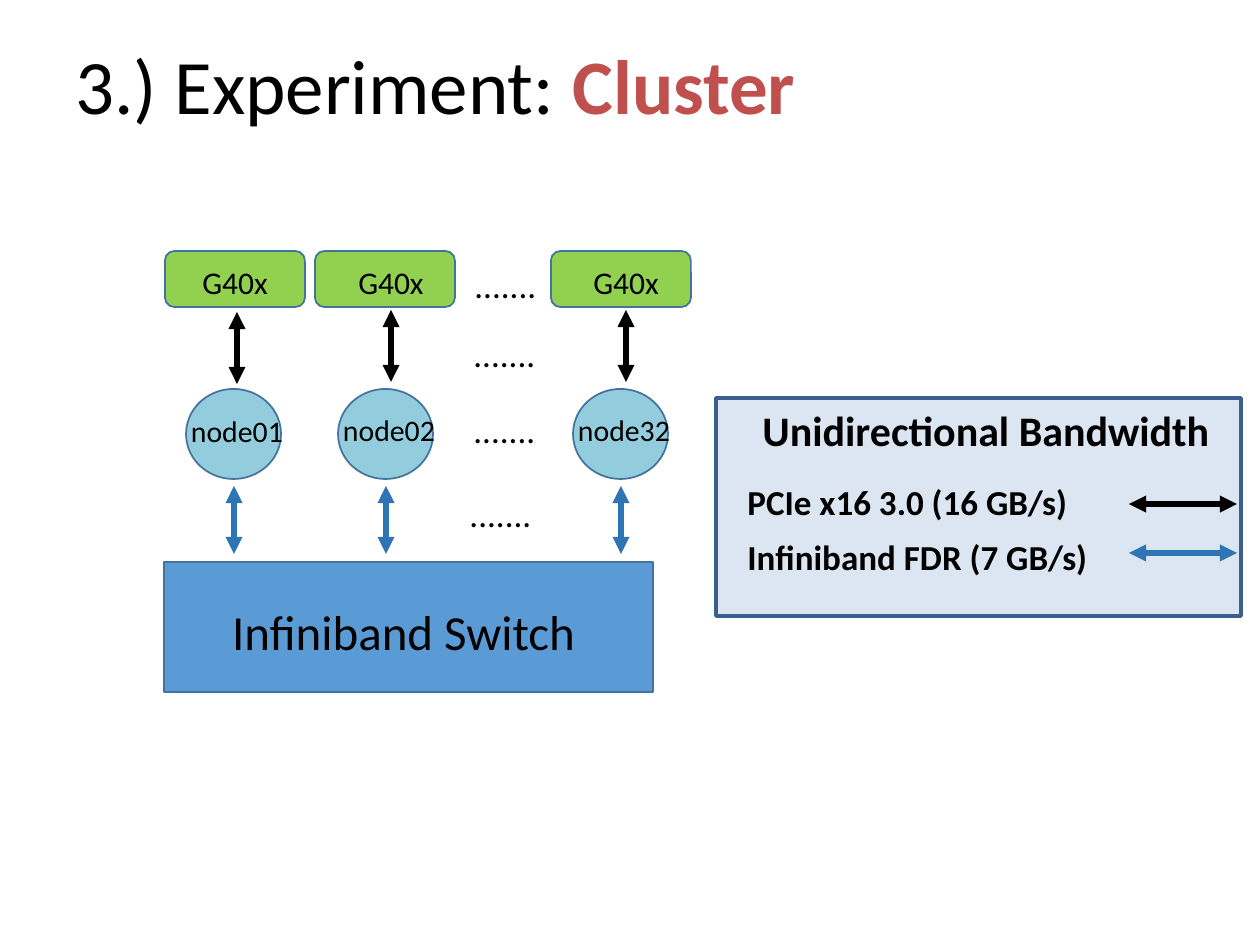
"""Build the cluster slide: GPUs, nodes, switch and bandwidth legend."""
from dataclasses import dataclass

from lxml.etree import SubElement
from pptx import Presentation
from pptx.dml.color import RGBColor
from pptx.enum.shapes import MSO_CONNECTOR, MSO_SHAPE
from pptx.enum.text import MSO_ANCHOR, PP_ALIGN
from pptx.oxml.ns import qn
from pptx.util import Emu, Pt

FONT = "Calibri"
BLACK = RGBColor(0x00, 0x00, 0x00)
RED = RGBColor(0xC0, 0x50, 0x4D)
GREEN = RGBColor(0x92, 0xD0, 0x50)
AQUA = RGBColor(0x93, 0xCD, 0xDD)
BLUE = RGBColor(0x5B, 0x9B, 0xD5)
LINK_BLUE = RGBColor(0x2E, 0x75, 0xB6)
OUTLINE = RGBColor(0x43, 0x73, 0x9E)
PANEL = RGBColor(0xDC, 0xE6, 0xF2)
PANEL_LINE = RGBColor(0x3A, 0x5F, 0x8C)


@dataclass
class Box:
    x: int
    y: int
    w: int
    h: int


@dataclass
class Column:
    node: str
    gpu_x: int
    gpu_label_x: int
    bus_x: int
    bus_y: int
    node_x: int
    node_label_y: int


@dataclass
class LegendRow:
    text: str
    text_y: int
    arrow_y: int
    color: RGBColor


COLUMNS = [
    Column("node01", 165, 174, 237, 312, 186, 407),
    Column("node02", 315, 330, 391, 310, 338, 406),
    Column("node32", 551, 565, 626, 310, 573, 406),
]
DOTS = [(462, 257), (461, 326), (461, 402), (457, 486)]
LEGEND = [
    LegendRow("PCIe x16 3.0 (16 GB/s)", 474, 504, BLACK),
    LegendRow("Infiniband FDR (7 GB/s)", 529, 553, LINK_BLUE),
]


def px(n: int) -> Emu:
    """Turn pixels into EMU."""
    return Emu(round(n * 914400 / 126))


def style_run(r, size: int, color: RGBColor = BLACK, bold: bool = False) -> None:
    """Set the font of one run."""
    r.font.name = FONT
    r.font.size = Pt(size)
    r.font.bold = bold
    r.font.color.rgb = color


def add_shape(s, kind: MSO_SHAPE, box: Box, fill: RGBColor,
              line: RGBColor = OUTLINE, width: int = 1) -> None:
    """Draw a filled and outlined shape."""
    sp = s.shapes.add_shape(kind, px(box.x), px(box.y), px(box.w), px(box.h))
    sp.shadow.inherit = False
    sp.fill.solid()
    sp.fill.fore_color.rgb = fill
    sp.line.color.rgb = line
    sp.line.width = Pt(width)


def add_text(s, text: str, box: Box, size: int, bold: bool = False,
             align: PP_ALIGN = PP_ALIGN.LEFT):
    """Write one paragraph and return its text frame."""
    sp = s.shapes.add_textbox(px(box.x), px(box.y), px(box.w), px(box.h))
    tf = sp.text_frame
    tf.word_wrap = True
    tf.text = text
    p = tf.paragraphs[0]
    p.alignment = align
    style_run(p.runs[0], size, bold=bold)
    return tf


def add_arrow(s, x1: int, y1: int, x2: int, y2: int, color: RGBColor) -> None:
    """Draw a double-headed arrow."""
    cxn = s.shapes.add_connector(MSO_CONNECTOR.STRAIGHT, px(x1), px(y1), px(x2), px(y2))
    cxn.line.color.rgb = color
    cxn.line.width = Pt(3.25)
    ln = cxn.line._get_or_add_ln()
    for end in ("a:headEnd", "a:tailEnd"):
        SubElement(ln, qn(end), type="triangle")
    SubElement(cxn._element.spPr, qn("a:effectLst"))


def add_column(s, col: Column) -> None:
    """Draw a GPU, its node and the two links below them."""
    add_shape(s, MSO_SHAPE.ROUNDED_RECTANGLE, Box(col.gpu_x, 251, 140, 56), GREEN)
    add_text(s, "G40x", Box(col.gpu_label_x, 257, 122, 47), 18, align=PP_ALIGN.CENTER)
    add_arrow(s, col.bus_x, col.bus_y, col.bus_x, col.bus_y + 72, BLACK)
    add_shape(s, MSO_SHAPE.OVAL, Box(col.node_x, 389, 95, 90), AQUA)
    add_text(s, col.node, Box(col.node_x - 26, col.node_label_y, 154, 44), 17,
             align=PP_ALIGN.CENTER)
    link_x = col.node_x + 48
    add_arrow(s, link_x, 554, link_x, 486, LINK_BLUE)


def add_legend(s) -> None:
    """Draw the bandwidth legend."""
    add_shape(s, MSO_SHAPE.RECTANGLE, Box(716, 398, 525, 218), PANEL, PANEL_LINE, 2)
    add_text(s, "Unidirectional Bandwidth", Box(750, 398, 483, 63), 24, bold=True)
    for row in LEGEND:
        add_text(s, row.text, Box(735, row.text_y, 394, 55), 20, bold=True)
        add_arrow(s, 1129, row.arrow_y, 1237, row.arrow_y, row.color)


def main() -> None:
    """Build and save the slide."""
    prs = Presentation()
    prs.slide_width, prs.slide_height = px(1260), px(945)
    s = prs.slides.add_slide(prs.slide_layouts[6])

    tf = add_text(s, "3.) Experiment: ", Box(63, 5, 1134, 158), 44)
    tf.vertical_anchor = MSO_ANCHOR.MIDDLE
    r = tf.paragraphs[0].add_run()
    r.text = "Cluster"
    style_run(r, 44, RED, bold=True)

    add_shape(s, MSO_SHAPE.RECTANGLE, Box(164, 562, 489, 130), BLUE)
    add_text(s, "Infiniband Switch", Box(207, 595, 393, 66), 28, align=PP_ALIGN.CENTER)
    for col in COLUMNS:
        add_column(s, col)
    for x, y in DOTS:
        add_text(s, ".......", Box(x, y, 171, 55), 20)
    add_legend(s)
    prs.save("out.pptx")


if __name__ == "__main__":
    main()
